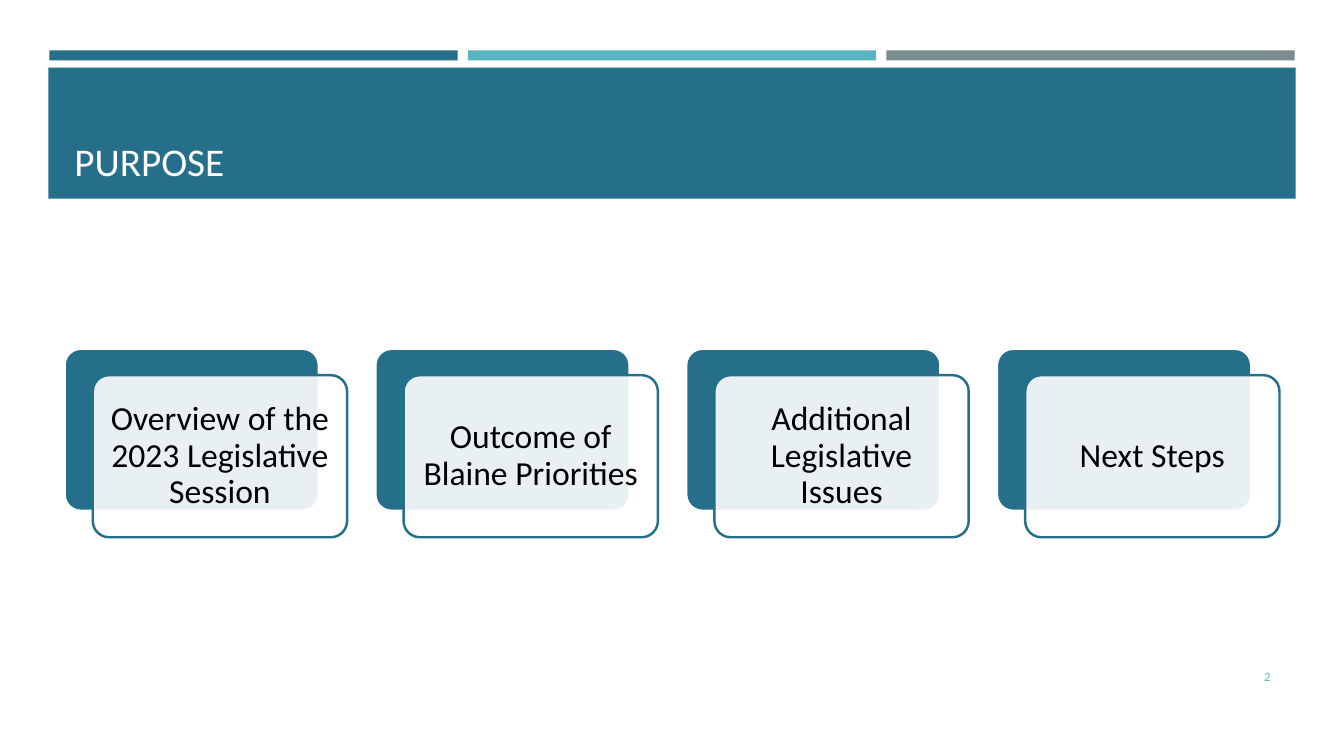
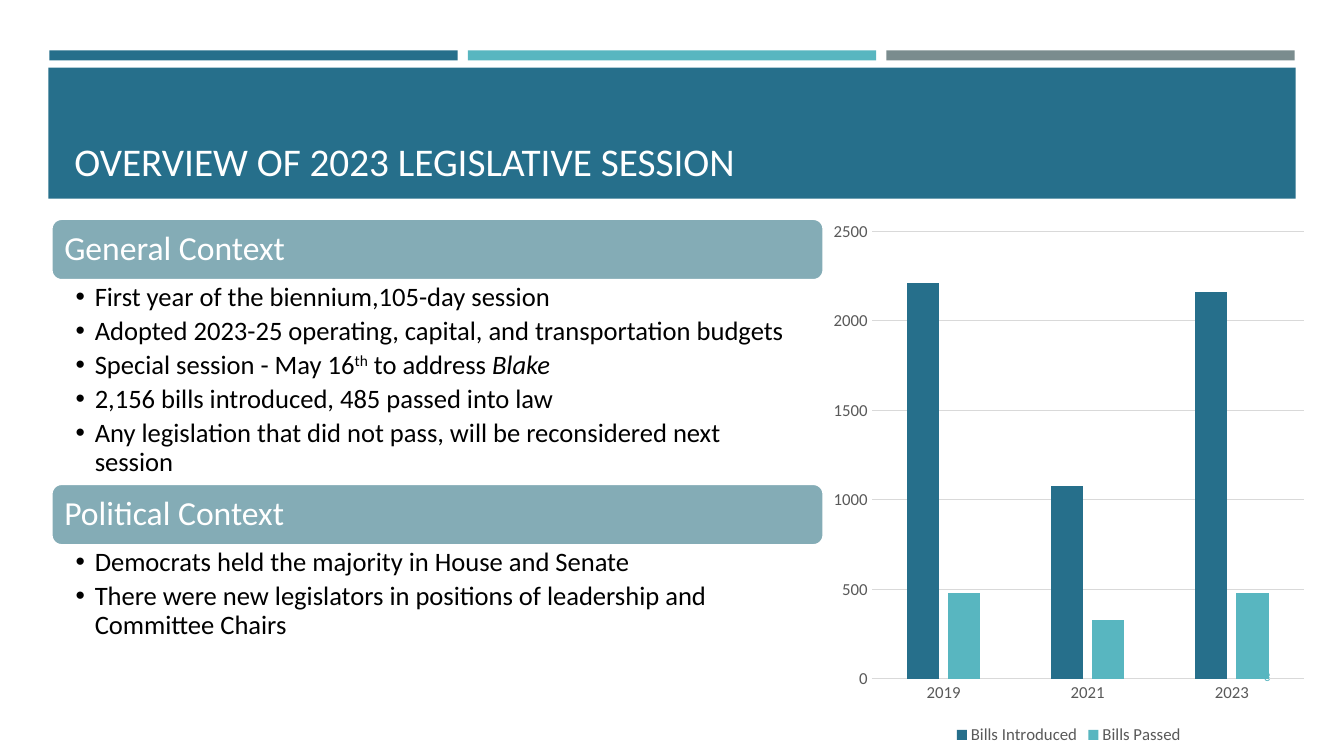
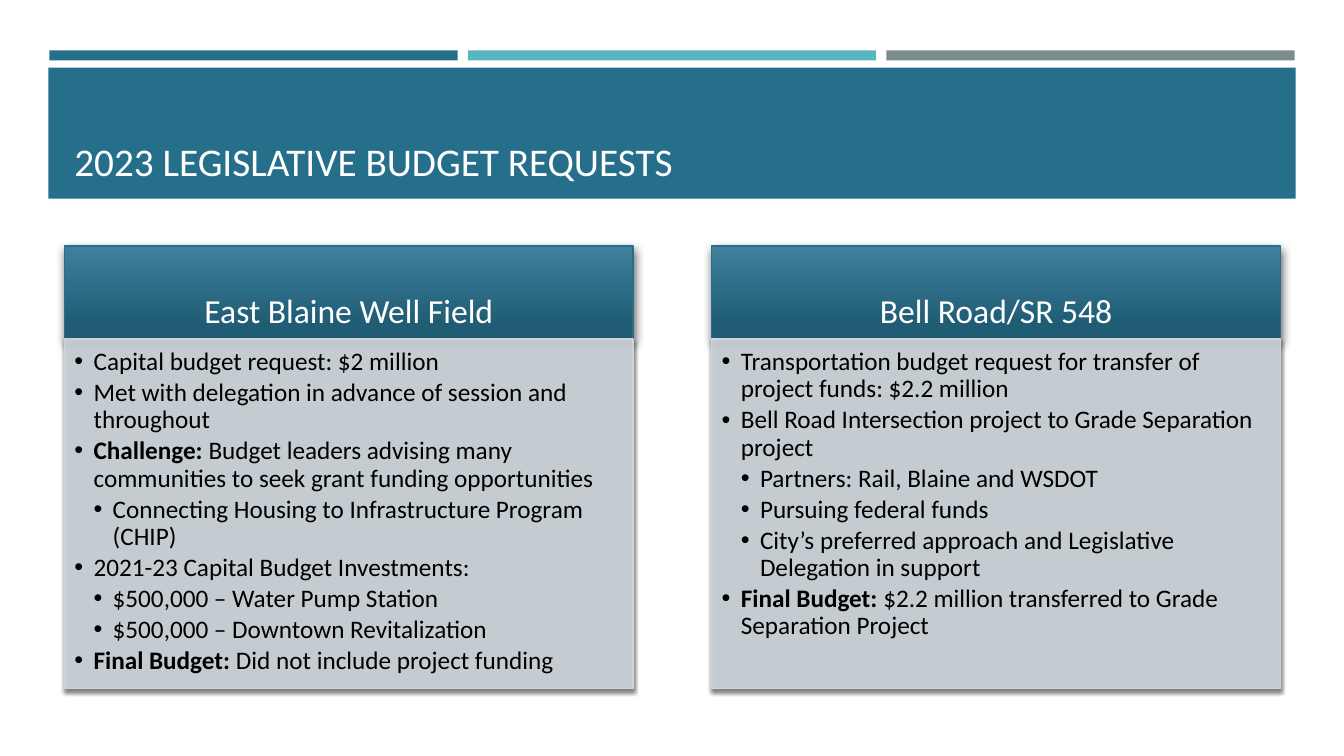
from dataclasses import dataclass

from lxml.etree import SubElement
from pptx import Presentation
from pptx.chart.data import CategoryChartData
from pptx.dml.color import RGBColor
from pptx.enum.chart import XL_CHART_TYPE, XL_LEGEND_POSITION, XL_TICK_MARK
from pptx.enum.shapes import MSO_SHAPE
from pptx.enum.text import MSO_ANCHOR, PP_ALIGN
from pptx.oxml.ns import qn
from pptx.util import Inches, Pt


@dataclass(frozen=True)
class Theme:
    font: str = "Calibri"
    teal: str = "266F8B"
    aqua: str = "58B6C0"
    gray: str = "7A8C8E"
    heading: str = "84ACB6"
    panel: str = "CDD5DA"
    grad_top: str = "3F809D"
    grad_end: str = "205D75"
    grid: str = "D9D9D9"
    axis: str = "595959"
    white: str = "FFFFFF"
    black: str = "000000"
    title_size: int = 28
    head_size: int = 24
    list_size: int = 19
    panel_size: int = 18
    axis_size: int = 12
    page_size: int = 9


@dataclass(frozen=True)
class Box:
    x: float
    y: float
    w: float
    h: float

    def share(self, left, top, width, height):
        """Box given as shares of this one."""
        return Box(self.x + left * self.w, self.y + top * self.h,
                   width * self.w, height * self.h)

    def cols(self, n, gap):
        w = (self.w - gap * (n - 1)) / n
        return [Box(self.x + i * (w + gap), self.y, w, self.h) for i in range(n)]

    def emu(self):
        return [Inches(v) for v in (self.x, self.y, self.w, self.h)]


T = Theme()
INDENT = 0.19
BANDS = Box(0.49, 0.5, 12.35, 0.1)
TITLE_BAND = Box(0.48, 0.67, 12.37, 1.3)
TITLE = Box(0.64, 0.77, 12.06, 1.11)
PAGE = Box(11.55, 6.51, 1.15, 0.4)


def rgb(code):
    return RGBColor.from_string(code)


# Text
def style(font, size, color):
    font.name, font.size, font.color.rgb = T.font, Pt(size), rgb(color)


def bullet(p, level):
    pPr = p._p.get_or_add_pPr()
    pPr.set("marL", str(Inches(INDENT * level)))
    pPr.set("indent", str(Inches(-INDENT)))
    SubElement(pPr, qn("a:buFont"), typeface="Arial")
    SubElement(pPr, qn("a:buChar"), char="•")


def write(sp, paras, size, color=T.black, align=PP_ALIGN.LEFT,
          anchor=MSO_ANCHOR.MIDDLE, inset=(0.1, 0.1, 0.1, 0.1), spacing=0.9, after=0):
    """Each paragraph is (level, runs); a run is a text or (text, mark)."""
    tf = sp.text_frame
    tf.word_wrap, tf.vertical_anchor = True, anchor
    tf.margin_left, tf.margin_top, tf.margin_right, tf.margin_bottom = map(Inches, inset)
    if isinstance(paras, str):
        paras = [(0, [paras])]
    for i, (level, runs) in enumerate(paras):
        p = tf.paragraphs[0] if i == 0 else tf.add_paragraph()
        p.alignment, p.line_spacing, p.space_after = align, spacing, Pt(after * size)
        if level:
            bullet(p, level)
        for run in runs:
            text, mark = (run, None) if isinstance(run, str) else run
            r = p.add_run()
            r.text = text
            style(r.font, size, color)
            if mark == "bold":
                r.font.bold = True
            elif mark == "italic":
                r.font.italic = True
            elif mark == "super":
                r._r.get_or_add_rPr().set("baseline", "30000")


def text_box(slide, box, text, size, **fmt):
    write(slide.shapes.add_textbox(*box.emu()), text, size, **fmt)


# Shapes
def shape(slide, box, fill, line=None, width=1.75, kind=MSO_SHAPE.RECTANGLE,
          corner=None, opacity=None):
    sp = slide.shapes.add_shape(kind, *box.emu())
    sp.shadow.inherit = False
    sp.fill.solid()
    sp.fill.fore_color.rgb = rgb(fill)
    if opacity:
        clr = sp._element.spPr.find(qn("a:solidFill"))[0]
        SubElement(clr, qn("a:alpha"), val=str(opacity * 1000))
    if line:
        sp.line.color.rgb, sp.line.width = rgb(line), Pt(width)
    else:
        sp.line.fill.background()
    if corner:
        sp.adjustments[0] = corner
    return sp


def add_shadow(sp, opacity, blur, dist, angle):
    effects = sp._element.spPr.find(qn("a:effectLst"))
    shadow = SubElement(effects, qn("a:outerShdw"), blurRad=str(Pt(blur)),
                        dist=str(Pt(dist)), dir=str(angle * 60000),
                        algn="ctr", rotWithShape="0")
    clr = SubElement(shadow, qn("a:srgbClr"), val=T.black)
    SubElement(clr, qn("a:alpha"), val=str(opacity * 1000))


def add_gradient(sp, top, end, stop):
    sp.fill.gradient()
    sp.fill.gradient_angle = 270
    first, last = sp.fill.gradient_stops
    first.color.rgb, last.color.rgb = rgb(top), rgb(end)
    first.position, last.position = 0, stop


# Frame shared by all slides
def new_slide(prs, title, page=None):
    slide = prs.slides.add_slide(prs.slide_layouts[6])
    for box, color in zip(BANDS.cols(3, 0.1), (T.teal, T.aqua, T.gray)):
        shape(slide, box, color)
    shape(slide, TITLE_BAND, T.teal)
    text_box(slide, TITLE, title, T.title_size, color=T.white,
             anchor=MSO_ANCHOR.BOTTOM, inset=(0.1, 0.05, 0.1, 0.05))
    if page:
        text_box(slide, PAGE, page, T.page_size, color=T.aqua,
                 align=PP_ALIGN.RIGHT, inset=(0.1, 0.05, 0.1, 0.05), spacing=1)
    return slide


# Row of layered cards
def card_row(slide, box, labels):
    rounded = dict(kind=MSO_SHAPE.ROUNDED_RECTANGLE, corner=0.1)
    for card, label in zip(box.cols(len(labels), 0.28), labels):
        shape(slide, card.share(0, 0, 0.9, 0.86), T.teal, T.white, **rounded)
        front = shape(slide, card.share(0.1, 0.14, 0.9, 0.86), T.white, T.teal,
                      opacity=90, **rounded)
        write(front, label, T.head_size, align=PP_ALIGN.CENTER)


# Headed bullet lists, stacked
def section_list(slide, box, sections):
    head_h, y = 0.61, box.y
    for heading, body_h, paras in sections:
        bar = shape(slide, Box(box.x, y, box.w, head_h), T.heading, T.white,
                    kind=MSO_SHAPE.ROUNDED_RECTANGLE)
        write(bar, heading, T.head_size, color=T.white)
        text_box(slide, Box(box.x, y + head_h, box.w, body_h), paras, T.list_size,
                 anchor=MSO_ANCHOR.TOP, inset=(0.24, 0.03, 0.19, 0.03), after=0.2)
        y += head_h + body_h


# Column chart
def bill_chart(slide, box, cats, series):
    data = CategoryChartData()
    data.categories = cats
    for name, values, _ in series:
        data.add_series(name, values)
    chart = slide.shapes.add_chart(XL_CHART_TYPE.COLUMN_CLUSTERED, *box.emu(), data).chart
    chart.has_title = False
    style(chart.font, T.axis_size, T.axis)
    chart.has_legend = True
    chart.legend.position = XL_LEGEND_POSITION.BOTTOM
    chart.legend.include_in_layout = False
    style(chart.legend.font, T.axis_size, T.axis)
    plot = chart.plots[0]
    plot.gap_width, plot.overlap, plot.vary_by_categories = 219, -27, False
    for s, (_, _, color) in zip(plot.series, series):
        s.format.fill.solid()
        s.format.fill.fore_color.rgb = rgb(color)
    cat, val = chart.category_axis, chart.value_axis
    for axis in (cat, val):
        axis.major_tick_mark = axis.minor_tick_mark = XL_TICK_MARK.NONE
        style(axis.tick_labels.font, T.axis_size, T.axis)
    val.has_major_gridlines = True
    for line in (cat.format.line, val.major_gridlines.format.line):
        line.color.rgb, line.width = rgb(T.grid), Pt(0.75)
    val.format.line.fill.background()
    val.minimum_scale, val.maximum_scale, val.major_unit = 0, 2500, 500


# Side-by-side panels
def panel_row(slide, box, panels):
    for panel, (heading, paras) in zip(box.cols(len(panels), 0.78), panels):
        head = shape(slide, panel.share(0, 0, 1, 0.21), T.teal, T.teal, width=1)
        add_gradient(head, T.grad_top, T.grad_end, 0.84)
        add_shadow(head, 60, 7, 3, 84)
        write(head, heading, T.head_size, color=T.white, align=PP_ALIGN.CENTER,
              anchor=MSO_ANCHOR.BOTTOM, inset=(0.15, 0.08, 0.15, 0.08))
        body = shape(slide, panel.share(0, 0.21, 1, 0.79), T.panel, T.panel,
                     width=1, opacity=90)
        add_shadow(body, 55, 3, 2, 90)
        write(body, paras, T.panel_size, anchor=MSO_ANCHOR.TOP,
              inset=(0.1, 0.1, 0.14, 0.16), after=0.15)


def purpose_slide(prs):
    slide = new_slide(prs, "PURPOSE", "2")
    card_row(slide, Box(0.64, 3.46, 12.05, 1.87), [
        "Overview of the 2023 Legislative Session",
        "Outcome of Blaine Priorities",
        "Additional Legislative Issues",
        "Next Steps",
    ])


def overview_slide(prs):
    slide = new_slide(prs, "OVERVIEW OF 2023 LEGISLATIVE SESSION", "3")
    section_list(slide, Box(0.51, 2.17, 7.66, 4.93), [
        ("General Context", 2.02, [
            (1, ["First year of the biennium,105-day session"]),
            (1, ["Adopted 2023-25 operating, capital, and transportation budgets"]),
            (1, ["Special session - May 16", ("th", "super"), " to address ",
                 ("Blake", "italic")]),
            (1, ["2,156 bills introduced, 485 passed into law"]),
            (1, ["Any legislation that did not pass, will be reconsidered next session"]),
        ]),
        ("Political Context", 1.69, [
            (1, ["Democrats held the majority in House and Senate"]),
            (1, ["There were new legislators in positions of leadership and "
                 "Committee Chairs"]),
        ]),
    ])
    bill_chart(slide, Box(8.17, 2.09, 4.86, 5.34), ["2019", "2021", "2023"], [
        ("Bills Introduced", (2210, 1080, 2160), T.teal),
        ("Bills Passed", (480, 330, 480), T.aqua),
    ])


def budget_slide(prs):
    slide = new_slide(prs, "2023 LEGISLATIVE BUDGET REQUESTS")
    panel_row(slide, Box(0.64, 2.44, 12.06, 4.39), [
        ("East Blaine Well Field", [
            (1, ["Capital budget request: $2 million"]),
            (1, ["Met with delegation in advance of session and throughout"]),
            (1, [("Challenge: ", "bold"), "Budget leaders advising many "
                 "communities to seek grant funding opportunities"]),
            (2, ["Connecting Housing to Infrastructure Program (CHIP)"]),
            (1, ["2021-23 Capital Budget Investments:"]),
            (2, ["$500,000 – Water Pump Station"]),
            (2, ["$500,000 – Downtown Revitalization"]),
            (1, [("Final Budget: ", "bold"), "Did not include project funding"]),
        ]),
        ("Bell Road/SR 548", [
            (1, ["Transportation budget request for transfer of project funds: "
                 "$2.2 million"]),
            (1, ["Bell Road Intersection project to Grade Separation project"]),
            (2, ["Partners: Rail, Blaine and WSDOT"]),
            (2, ["Pursuing federal funds"]),
            (2, ["City’s preferred approach and Legislative Delegation in support"]),
            (1, [("Final Budget: ", "bold"),
                 "$2.2 million transferred to Grade Separation Project"]),
        ]),
    ])


def main():
    prs = Presentation()
    prs.slide_width, prs.slide_height = Inches(13.33), Inches(7.5)
    purpose_slide(prs)
    overview_slide(prs)
    budget_slide(prs)
    prs.save("out.pptx")


if __name__ == "__main__":
    main()
